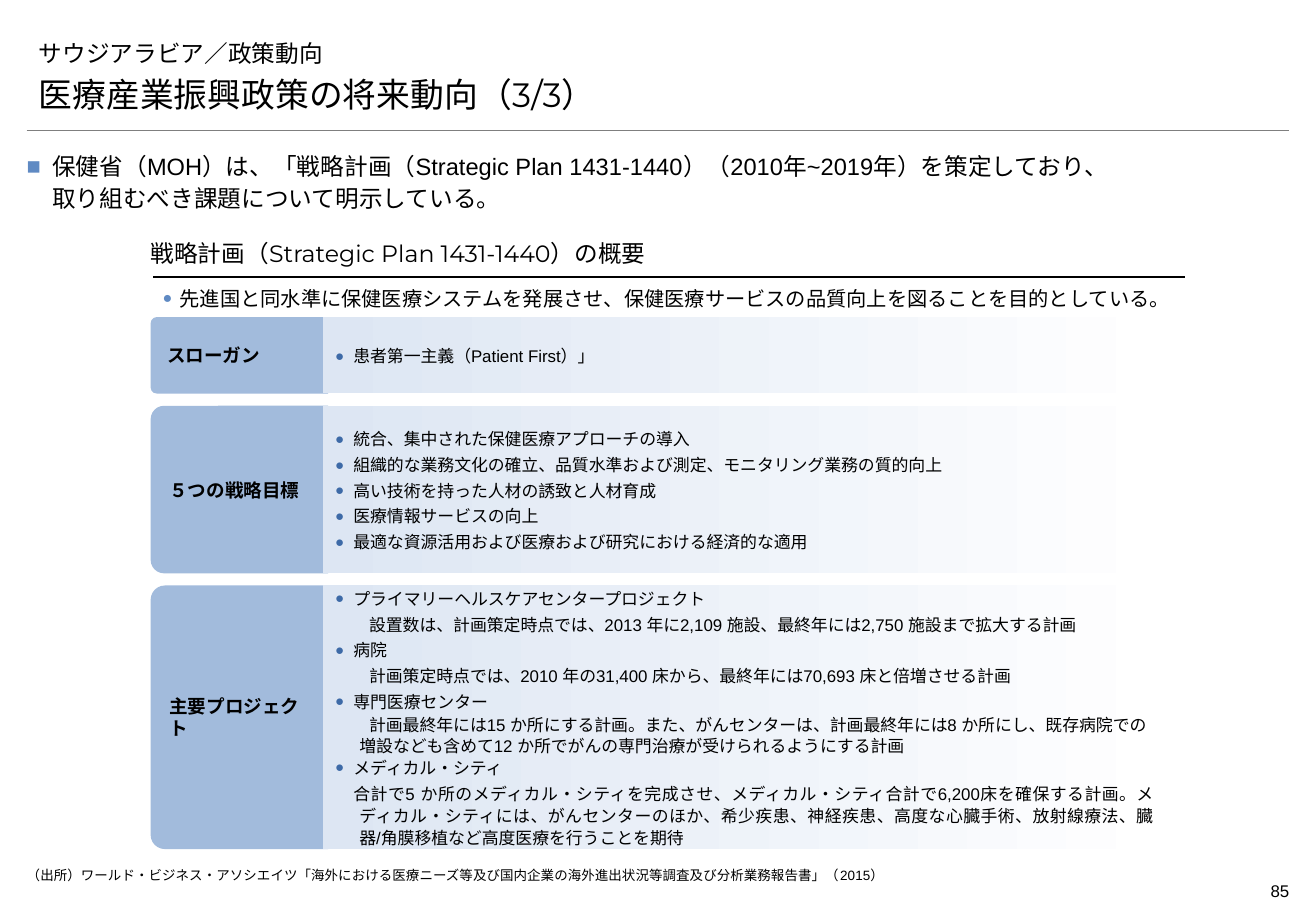
from lxml import etree
from pptx import Presentation
from pptx.dml.color import RGBColor
from pptx.enum.shapes import MSO_CONNECTOR, MSO_SHAPE
from pptx.enum.text import MSO_ANCHOR, PP_ALIGN
from pptx.oxml.ns import qn
from pptx.util import Inches, Pt

LINE = MSO_CONNECTOR.STRAIGHT
TAB = MSO_SHAPE.ROUND_2_SAME_RECTANGLE
RECT = MSO_SHAPE.RECTANGLE
TOP, MID, LOW = MSO_ANCHOR.TOP, MSO_ANCHOR.MIDDLE, MSO_ANCHOR.BOTTOM
LEFT, RIGHT, JUST = PP_ALIGN.LEFT, PP_ALIGN.RIGHT, PP_ALIGN.JUSTIFY

BLACK, GREY = "000000", "7F7F7F"
BLUE, PALE, WHITE = "A2BBDC", "DDE6F3", "FFFFFF"
MARK, DEEP = "5F8AC3", "3D6AA7"
LABEL_W, GAP = 1.46, 0.1

DOT, MORE, FLOW, LAST = "dot", "more", "flow", "last"
BANDS = [
    ("スローガン", 0.63, [(DOT, "患者第一主義（Patient First）」")]),
    ("５つの戦略目標", 1.38, [
        (DOT, "統合、集中された保健医療アプローチの導入"),
        (DOT, "組織的な業務文化の確立、品質水準および測定、モニタリング業務の質的向上"),
        (DOT, "高い技術を持った人材の誘致と人材育成"),
        (DOT, "医療情報サービスの向上"),
        (DOT, "最適な資源活用および医療および研究における経済的な適用"),
    ]),
    ("主要プロジェクト", 2.17, [
        (DOT, "プライマリーヘルスケアセンタープロジェクト"),
        (MORE, "設置数は、計画策定時点では、2013 年に2,109 施設、最終年には2,750 施設まで拡大する計画"),
        (DOT, "病院"),
        (MORE, "計画策定時点では、2010 年の31,400 床から、最終年には70,693 床と倍増させる計画"),
        (DOT, "専門医療センター"),
        (FLOW, "計画最終年には15 か所にする計画。また、がんセンターは、計画最終年には8 か所にし、"
               "既存病院での増設なども含めて12 か所でがんの専門治療が受けられるようにする計画"),
        (DOT, "メディカル・シティ"),
        (LAST, "合計で5 か所のメディカル・シティを完成させ、メディカル・シティ合計で6,200床を確保する計画。"
               "メディカル・シティには、がんセンターのほか、希少疾患、神経疾患、高度な心臓手術、放射線療法、"
               "臓器/角膜移植など高度医療を行うことを期待"),
    ]),
]
INDENT = {DOT: (0.15, -0.15), MORE: (0.2, 0.08), FLOW: (0.2, 0.08), LAST: (0.2, -0.05)}


def tint(code):
    return RGBColor.from_string(code)


def inset(frame, side, top, base):
    frame.margin_left = frame.margin_right = Inches(side)
    frame.margin_top, frame.margin_bottom = Inches(top), Inches(base)


def place(item, x, y, w, h):
    item.left, item.top = Inches(x), Inches(y)
    item.width, item.height = Inches(w), Inches(h)


def style(para, size, font="Arial", bold=False, align=LEFT):
    para.alignment = align
    para.font.size = Pt(size)
    para.font.name = font
    para.font.bold = bold
    para.font.color.rgb = tint(BLACK)


def indent(para, left, first):
    props = para._p.get_or_add_pPr()
    props.set("marL", str(Inches(left)))
    props.set("indent", str(Inches(first)))
    return props


def bullet(para, sign, code, scale, left):
    props = indent(para, left, -left)
    color = etree.SubElement(props, qn("a:buClr"))
    etree.SubElement(color, qn("a:srgbClr"), val=code)
    etree.SubElement(props, qn("a:buSzPct"), val=str(scale * 1000))
    etree.SubElement(props, qn("a:buFont"), typeface="Arial")
    etree.SubElement(props, qn("a:buChar"), char=sign)


def space(para, line, after):
    para.line_spacing = line
    para.space_after = Pt(after)


def text_box(slide, x, y, w, h, anchor=TOP, pads=(0, 0, 0)):
    frame = slide.shapes.add_textbox(*map(Inches, (x, y, w, h))).text_frame
    frame.word_wrap = True
    frame.vertical_anchor = anchor
    inset(frame, *pads)
    return frame


def rule(slide, x, y, w, code, weight):
    line = slide.shapes.add_connector(LINE, *map(Inches, (x, y, x + w, y)))
    line.line.color.rgb = tint(code)
    line.line.width = Pt(weight)
    etree.SubElement(line._element.spPr, qn("a:effectLst"))


def block(slide, kind, x, y, w, h):
    item = slide.shapes.add_shape(kind, *map(Inches, (x, y, w, h)))
    item.shadow.inherit = False
    item.line.fill.background()
    item.text_frame.word_wrap = True
    item.text_frame.vertical_anchor = MID
    return item


def header(slide, x, y, w):
    title = slide.shapes.title
    place(title, x, y, w, 0.39)
    frame = title.text_frame
    frame.vertical_anchor = LOW
    inset(frame, 0.1, 0.05, 0.05)
    frame.text = "サウジアラビア／政策動向"
    style(frame.paragraphs[0], 14, "Montserrat")
    para = text_box(slide, x, y + 0.39, w, 0.39, LOW, (0.1, 0.05, 0.05)).paragraphs[0]
    style(para, 20, "Montserrat")
    for text, font in (("医療産業振興政策の将来動向", "Noto Sans CJK JP"), ("（3/3）", "Montserrat")):
        run = para.add_run()
        run.text = text
        run.font.name = font
    rule(slide, x, y + 0.86, w, GREY, 0.25)


def lead(slide, x, y, w):
    para = text_box(slide, x, y, w, 0.52).paragraphs[0]
    para.text = ("保健省（MOH）は、「戦略計画（Strategic Plan 1431-1440）（2010年~2019年）を策定しており、\n"
                 "取り組むべき課題について明示している。")
    bullet(para, "■", MARK, 100, 0.21)
    space(para, 1.1, 2)
    style(para, 14)


def summary(slide, x, y, w):
    para = text_box(slide, x, y, w, 0.31, LOW, (0, 0.05, 0.08)).paragraphs[0]
    para.text = "戦略計画（Strategic Plan 1431-1440）の概要"
    style(para, 14, "Montserrat")
    rule(slide, x + 0.02, y + 0.31, w - 0.01, BLACK, 0.75)
    para = text_box(slide, x, y + 0.31, w, 0.33, TOP, (0.1, 0.05, 0.05)).paragraphs[0]
    para.text = "先進国と同水準に保健医療システムを発展させ、保健医療サービスの品質向上を図ることを目的としている。"
    bullet(para, "●", MARK, 80, 0.14)
    space(para, 1.14, 3)
    style(para, 12, align=JUST)


def band(slide, x, y, w, h, name, rows):
    label = block(slide, TAB, x + (LABEL_W - h) / 2, y + (h - LABEL_W) / 2, h, LABEL_W)
    label.rotation = 270
    label.adjustments[0], label.adjustments[1] = 0.08, 0
    label.fill.solid()
    label.fill.fore_color.rgb = tint(BLUE)
    frame = label.text_frame
    inset(frame, 0.1, 0.12, 0.12)
    label._element.txBody.bodyPr.set("vert", "vert")
    frame.text = name
    style(frame.paragraphs[0], 11, bold=True)

    panel = block(slide, RECT, x + 1.42, y, w - 1.42, h)
    panel.fill.gradient()
    panel.fill.gradient_angle = 0
    for stop, code in zip(panel.fill.gradient_stops, (PALE, WHITE)):
        stop.color.rgb = tint(code)
    frame = panel.text_frame
    inset(frame, 0.1, 0.05, 0.05)
    for i, (kind, text) in enumerate(rows):
        para = frame.add_paragraph() if i else frame.paragraphs[0]
        para.text = text
        if kind == DOT:
            bullet(para, "●", DEEP, 90, INDENT[DOT][0])
        else:
            indent(para, *INDENT[kind])
        if kind != FLOW:
            space(para, 1.1, 2)
        style(para, 10, align=LEFT if kind == FLOW else JUST)


def footer(slide, x, y, w):
    para = text_box(slide, x, y, w - 0.78, 0.16).paragraphs[0]
    para.text = ("（出所）ワールド・ビジネス・アソシエイツ「海外における医療ニーズ等及び"
                 "国内企業の海外進出状況等調査及び分析業務報告書」（2015）")
    style(para, 8)
    para = text_box(slide, x + w - 0.78, y + 0.06, 0.78, 0.27, TOP, (0, 0.05, 0.05)).paragraphs[0]
    para.text = "85"
    style(para, 10, align=RIGHT)


def main():
    deck = Presentation()
    deck.slide_width, deck.slide_height = Inches(10.83), Inches(7.5)
    slide = deck.slides.add_slide(deck.slide_layouts[5])
    header(slide, 0.22, 0.21, 10.39)
    lead(slide, 0.22, 1.23, 10.39)
    summary(slide, 1.24, 1.97, 8.5)
    y = 2.61
    for name, h, rows in BANDS:
        band(slide, 1.24, y, 8.35, h, name, rows)
        y += h + GAP
    footer(slide, 0.22, 7.14, 10.39)
    deck.save("out.pptx")


if __name__ == "__main__":
    main()
